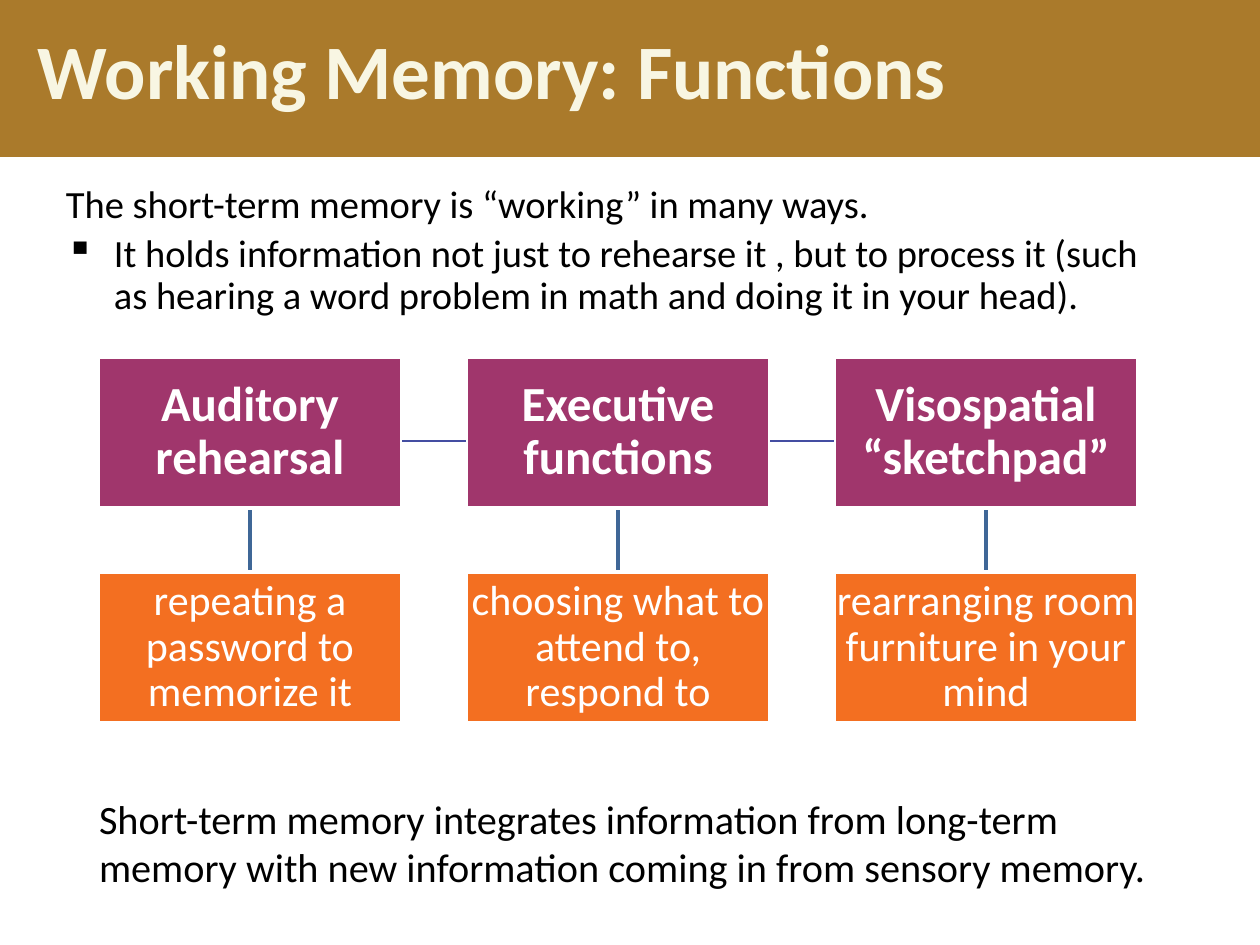
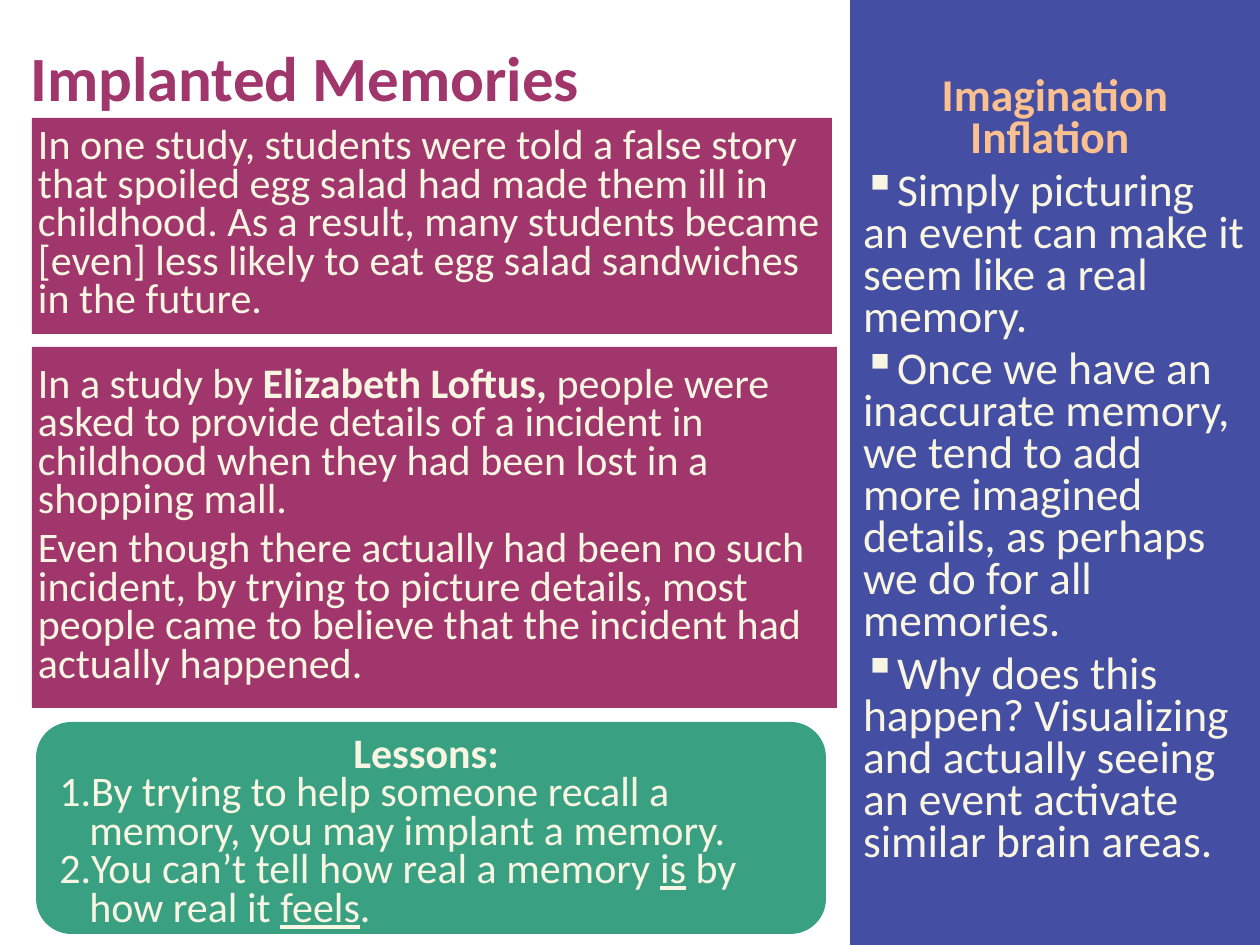
from lxml import etree
from pptx import Presentation
from pptx.dml.color import RGBColor
from pptx.enum.shapes import MSO_CONNECTOR as Connector, MSO_SHAPE as Shape
from pptx.enum.text import MSO_ANCHOR as Anchor, PP_ALIGN as Align
from pptx.oxml.ns import qn
from pptx.util import Emu, Pt

EMU_PER_PX = 914400 / 126
FONT = "Calibri"
SLIDE_WIDTH, SLIDE_HEIGHT = 1260, 945

BLACK, WHITE, CREAM, PEACH = "000000", "FFFFFF", "F8F6E3", "FAC090"
GOLD, PLUM, ORANGE = "AA7A2B", "A0366C", "F36F21"
INDIGO, STEEL, GREEN = "444EA2", "3F6797", "3AA082"

FUNCTIONS = [
    ("Auditory rehearsal", "repeating a password to memorize it"),
    ("Executive functions", "choosing what to attend to, respond to"),
    ("Visospatial “sketchpad”", "rearranging room furniture in your mind"),
]
EGG_SALAD_STUDY = (
    "In one study, students were told a false story that spoiled egg salad had "
    "made them ill in childhood. As a result, many students became [even] less "
    "likely to eat egg salad sandwiches in the future.")
MALL_STUDY = [
    [("In a study by ", ""), ("Elizabeth Loftus, ", "b"),
     ("people were asked to provide details of a incident in childhood when "
      "they had been lost in a shopping mall.", "")],
    "Even though there actually had been no such incident, by trying to picture "
    "details, most people came to believe that the incident had actually happened.",
]
IMAGINATION_POINTS = [
    "Simply picturing an event can make it seem like a real memory.",
    "Once we have an inaccurate memory, we tend to add more imagined details, "
    "as perhaps we do for all memories.",
    "Why does this happen? Visualizing and actually seeing an event activate "
    "similar brain areas.",
]
LESSONS = [
    "By trying to help someone recall a memory, you may implant a memory.",
    [("You can’t tell how real a memory ", ""), ("is", "u"),
     (" by how real it ", ""), ("feels", "u"), (".", "")],
]


def px(value):
    return Emu(round(value * EMU_PER_PX))


def color(hex_code):
    return RGBColor.from_string(hex_code)


# Shared parts

def set_frame(shape, anchor, insets):
    frame = shape.text_frame
    frame.word_wrap = True
    frame.vertical_anchor = anchor
    (frame.margin_left, frame.margin_top,
     frame.margin_right, frame.margin_bottom) = map(px, insets)
    return frame


def add_panel(slide, box, fill, kind=Shape.RECTANGLE, outline=None,
              anchor=Anchor.MIDDLE, insets=(13, 6, 13, 6)):
    shape = slide.shapes.add_shape(kind, *map(px, box))
    shape.shadow.inherit = False
    shape.fill.solid()
    shape.fill.fore_color.rgb = color(fill)
    if outline:
        shape.line.color.rgb = color(outline)
        shape.line.width = Pt(2)
    else:
        shape.line.fill.background()
    set_frame(shape, anchor, insets)
    return shape


def add_text_box(slide, box, anchor=Anchor.TOP):
    shape = slide.shapes.add_textbox(*map(px, box))
    set_frame(shape, anchor, (13, 6, 13, 6))
    return shape


def add_bullet(paragraph, bullet):
    """Use "1." for automatic numbers, any other text as the bullet itself."""
    properties = paragraph._p.get_or_add_pPr()
    if bullet == "1.":
        etree.SubElement(properties, qn("a:buAutoNum"), type="arabicPeriod")
    else:
        etree.SubElement(properties, qn("a:buChar"), char=bullet)


def write(shape, content, size, font_color, bold=False, align=Align.LEFT,
          spacing=None, before=0, after=0, bullet=None, hanging=0):
    """Add one paragraph; content is a string or (text, "b" or "u") runs."""
    frame = shape.text_frame
    paragraph = frame.paragraphs[-1]
    if paragraph.runs:
        paragraph = frame.add_paragraph()
    paragraph.alignment = align
    paragraph.line_spacing = spacing
    paragraph.space_before, paragraph.space_after = Pt(before), Pt(after)
    properties = paragraph._p.get_or_add_pPr()
    properties.set("marL", str(px(hanging)))
    properties.set("indent", str(-px(hanging)))
    if bullet:
        add_bullet(paragraph, bullet)
    for text, style in [(content, "")] if isinstance(content, str) else content:
        run = paragraph.add_run()
        run.text = text
        run.font.name, run.font.size = FONT, Pt(size)
        run.font.color.rgb = color(font_color)
        run.font.bold = bold or style == "b"
        run.font.underline = style == "u"


def add_line(slide, start, end, line_color, width):
    line = slide.shapes.add_connector(Connector.STRAIGHT, *map(px, start + end))
    line.line.color.rgb = color(line_color)
    line.line.width = Pt(width)
    etree.SubElement(line._element.spPr, qn("a:effectLst"))
    return line


# Slide 1: working memory

def add_title_band(slide, box, title):
    band = add_panel(slide, box, GOLD, insets=(38, 6, 13, 6))
    write(band, title, 44, CREAM, bold=True, spacing=Pt(42))


def add_introduction(slide, box):
    shape = add_text_box(slide, box)
    layout = dict(spacing=0.9, before=4.4, hanging=48)
    write(shape, "The short-term memory is “working” in many ways.",
          22, BLACK, **layout)
    write(shape, "It holds information not just to rehearse it , but to process it "
          "(such as hearing a word problem in math and doing it in your head).",
          22, BLACK, bullet="▪", **layout)


def add_function_box(slide, box, text, fill, size, bold=False):
    shape = add_panel(slide, box, fill, outline=WHITE, insets=(2, 2, 2, 2))
    write(shape, text, size, WHITE, bold, Align.CENTER, spacing=0.9)
    return shape


def add_function_chart(slide, box):
    left, top, width, height = box
    box_width, box_height = 304, 151
    pitch = (width - box_width) // (len(FUNCTIONS) - 1)
    example_top = top + height - box_height
    for index, (name, example) in enumerate(FUNCTIONS):
        x = left + index * pitch
        function = add_function_box(slide, (x, top, box_width, box_height),
                                    name, PLUM, 28, bold=True)
        example_box = add_function_box(
            slide, (x, example_top, box_width, box_height), example, ORANGE, 24)
        # Stem behind the boxes, from function to example
        middle = x + box_width // 2
        stem = add_line(slide, (middle, top + box_height), (middle, example_top),
                        STEEL, 2)
        stem.begin_connect(function, 2)
        stem.end_connect(example_box, 0)
        slide.shapes._spTree.insert(2, stem._element)
        # Link to the function on the left
        if index:
            link_y = top + 84
            add_line(slide, (x, link_y), (x - pitch + box_width, link_y),
                     INDIGO, 1.5)


def build_functions_slide(slide):
    add_title_band(slide, (0, 0, SLIDE_WIDTH, 157), "Working Memory: Functions")
    add_introduction(slide, (53, 179, 1134, 147))
    add_function_chart(slide, (98, 357, 1040, 366))
    summary = add_text_box(slide, (86, 788, 1080, 105))
    write(summary, "Short-term memory integrates information from long-term memory "
          "with new information coming in from sensory memory.",
          23, BLACK, before=4.6)


# Slide 2: implanted memories

def add_study(slide, box, paragraphs):
    panel = add_panel(slide, box, PLUM, insets=(6, 6, 6, 6))
    for index, content in enumerate(paragraphs):
        write(panel, content, 24, CREAM, spacing=Pt(22), before=6 if index else 0)


def add_lessons(slide, box):
    panel = add_panel(slide, box, GREEN, Shape.ROUNDED_RECTANGLE, anchor=Anchor.TOP)
    write(panel, "Lessons: ", 24, CREAM, bold=True, align=Align.CENTER,
          spacing=Pt(22))
    for lesson in LESSONS:
        write(panel, lesson, 24, CREAM, spacing=Pt(22), bullet="1.", hanging=30)


def add_sidebar(slide, box):
    panel = add_panel(slide, box, INDIGO)
    layout = dict(spacing=Pt(24), after=6)
    write(panel, "Imagination Inflation ", 26, PEACH, bold=True,
          align=Align.CENTER, **layout)
    for point in IMAGINATION_POINTS:
        write(panel, point, 26, CREAM, bullet="▪", **layout)


def build_implanted_slide(slide):
    title = add_text_box(slide, (11, 20, 588, 112), Anchor.MIDDLE)
    write(title, "Implanted Memories", 36, PLUM, bold=True, align=Align.CENTER)
    add_study(slide, (32, 118, 800, 216), [EGG_SALAD_STUDY])
    add_study(slide, (32, 347, 805, 361), MALL_STUDY)
    add_lessons(slide, (36, 722, 790, 212))
    add_sidebar(slide, (850, 0, SLIDE_WIDTH - 850, SLIDE_HEIGHT))


def main():
    presentation = Presentation()
    presentation.slide_width = px(SLIDE_WIDTH)
    presentation.slide_height = px(SLIDE_HEIGHT)
    blank = presentation.slide_layouts[6]
    for build in (build_functions_slide, build_implanted_slide):
        build(presentation.slides.add_slide(blank))
    presentation.save("out.pptx")


if __name__ == "__main__":
    main()
